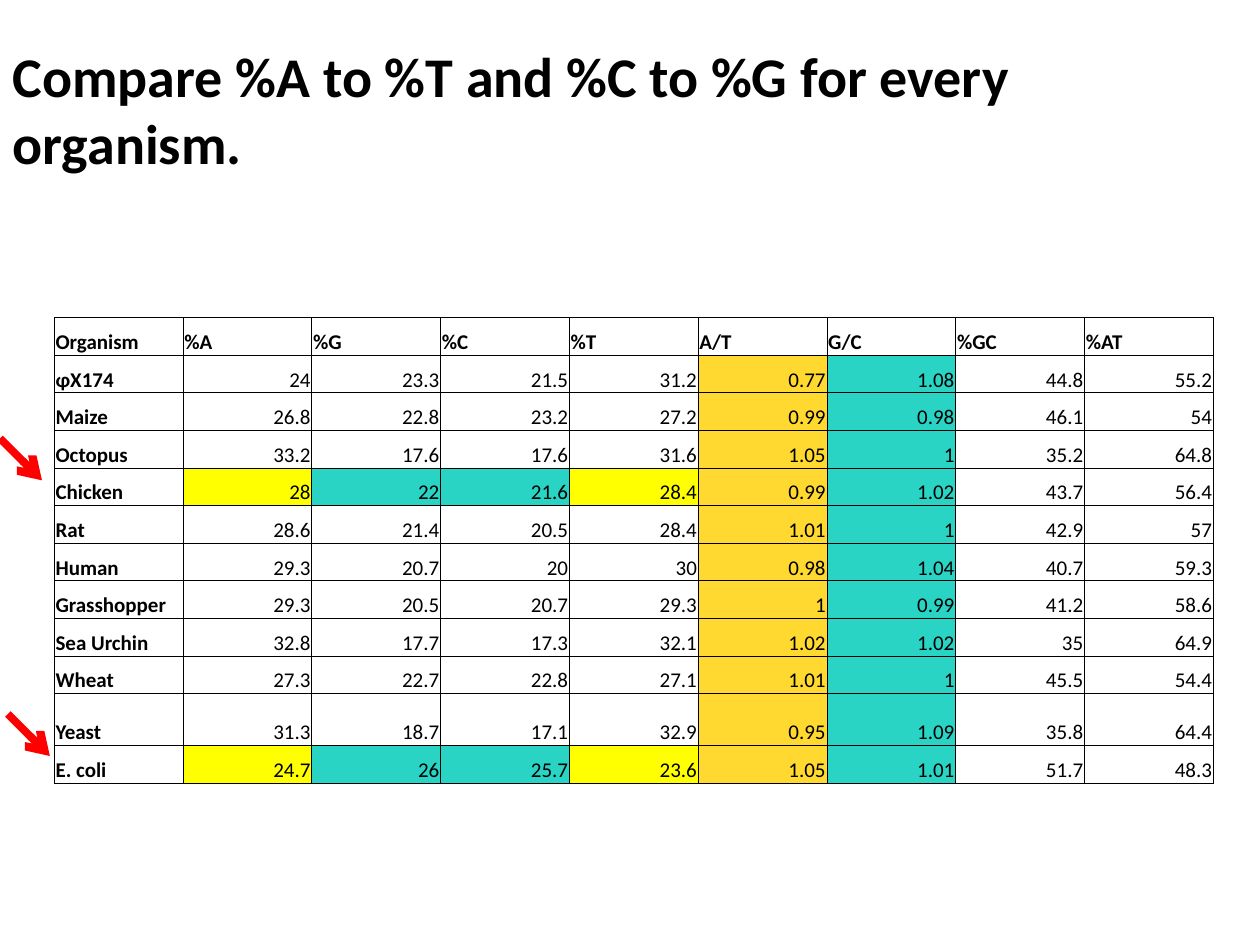
import pptx
import pptx.util
import pptx.dml.color
import pptx.enum.shapes
import pptx.enum.text
import pptx.oxml
import pptx.oxml.ns
from lxml import etree

Pt = pptx.util.Pt
RGB = pptx.dml.color.RGBColor.from_string
ALIGN = pptx.enum.text.PP_ALIGN
ANCHOR = pptx.enum.text.MSO_ANCHOR
COLORS = {"text": "000000", "border": "000000", "arrow": "FF0000",
          "gold": "FFD830", "teal": "29D4C4", "yellow": "FFFF00"}
NS = pptx.oxml.ns.nsdecls("a")


def write(tf, text, size=12, bold=False, align=ALIGN.LEFT):
    p = tf.paragraphs[0]
    p.alignment = align
    r = p.add_run()
    r.text = text
    r.font.name = "Calibri"
    r.font.size = Pt(size)
    r.font.bold = bold
    r.font.color.rgb = RGB(COLORS["text"])


prs = pptx.Presentation()
prs.slide_width, prs.slide_height = Pt(720), Pt(540)
s = prs.slides.add_slide(prs.slide_layouts[5])

# Title
title = s.shapes.title
title.left, title.top, title.width, title.height = Pt(0), Pt(20), Pt(712), Pt(85)
tf = title.text_frame
tf.word_wrap = True
tf.auto_size = pptx.enum.text.MSO_AUTO_SIZE.SHAPE_TO_FIT_TEXT
tf.vertical_anchor = ANCHOR.TOP
write(tf, "Compare %A to %T and %C to %G for every organism.", size=32, bold=True)

# Base composition table
rows = [
    ["Organism", "%A", "%G", "%C", "%T", "A/T", "G/C", "%GC", "%AT"],
    ["φX174", "24", "23.3", "21.5", "31.2", "0.77", "1.08", "44.8", "55.2"],
    ["Maize", "26.8", "22.8", "23.2", "27.2", "0.99", "0.98", "46.1", "54"],
    ["Octopus", "33.2", "17.6", "17.6", "31.6", "1.05", "1", "35.2", "64.8"],
    ["Chicken", "28", "22", "21.6", "28.4", "0.99", "1.02", "43.7", "56.4"],
    ["Rat", "28.6", "21.4", "20.5", "28.4", "1.01", "1", "42.9", "57"],
    ["Human", "29.3", "20.7", "20", "30", "0.98", "1.04", "40.7", "59.3"],
    ["Grasshopper", "29.3", "20.5", "20.7", "29.3", "1", "0.99", "41.2", "58.6"],
    ["Sea Urchin", "32.8", "17.7", "17.3", "32.1", "1.02", "1.02", "35", "64.9"],
    ["Wheat", "27.3", "22.7", "22.8", "27.1", "1.01", "1", "45.5", "54.4"],
    ["Yeast", "31.3", "18.7", "17.1", "32.9", "0.95", "1.09", "35.8", "64.4"],
    ["E. coli", "24.7", "26", "25.7", "23.6", "1.05", "1.01", "51.7", "48.3"],
]
ratio_fills = {"A/T": "gold", "G/C": "teal"}
pair_fills = {"%A": "yellow", "%T": "yellow", "%G": "teal", "%C": "teal"}
highlighted = ("Chicken", "E. coli")

table = s.shapes.add_table(len(rows), len(rows[0]), Pt(31), Pt(181.5),
                           Pt(662.4), Pt(266.2)).table
table.first_row = table.horz_banding = False
for col in table.columns:
    col.width = Pt(73.6)

for i, values in enumerate(rows):
    organism = values[0]
    table.rows[i].height = Pt(29.7 if organism == "Yeast" else 21.5)
    for j, value in enumerate(values):
        cell = table.cell(i, j)
        is_label = i == 0 or j == 0
        cell.vertical_anchor = ANCHOR.BOTTOM
        cell.margin_left = cell.margin_right = cell.margin_top = Pt(0.75)
        cell.margin_bottom = 0
        write(cell.text_frame, value, bold=is_label,
              align=ALIGN.LEFT if is_label else ALIGN.RIGHT)

        for side in "LRTB":
            cell._tc.get_or_add_tcPr().append(pptx.oxml.parse_xml(
                f'<a:ln{side} {NS} w="{Pt(0.5)}"><a:solidFill>'
                f'<a:srgbClr val="{COLORS["border"]}"/></a:solidFill></a:ln{side}>'))

        fill = None
        if i > 0:
            fill = ratio_fills.get(rows[0][j])
            if organism in highlighted:
                fill = fill or pair_fills.get(rows[0][j])
        if fill:
            cell.fill.solid()
            cell.fill.fore_color.rgb = RGB(COLORS[fill])
        else:
            cell.fill.background()

# Arrows to the highlighted organisms
for x, y in [(0, 250.5), (4.5, 408)]:
    arrow = s.shapes.add_connector(pptx.enum.shapes.MSO_CONNECTOR.STRAIGHT,
                                   Pt(x), Pt(y), Pt(x + 24), Pt(y + 24))
    arrow.line.color.rgb = RGB(COLORS["arrow"])
    arrow.line.width = Pt(4.5)
    etree.SubElement(arrow.line._get_or_add_ln(),
                     pptx.oxml.ns.qn("a:tailEnd"), type="arrow")
    etree.SubElement(arrow._element.spPr, pptx.oxml.ns.qn("a:effectLst"))

prs.save("out.pptx")
